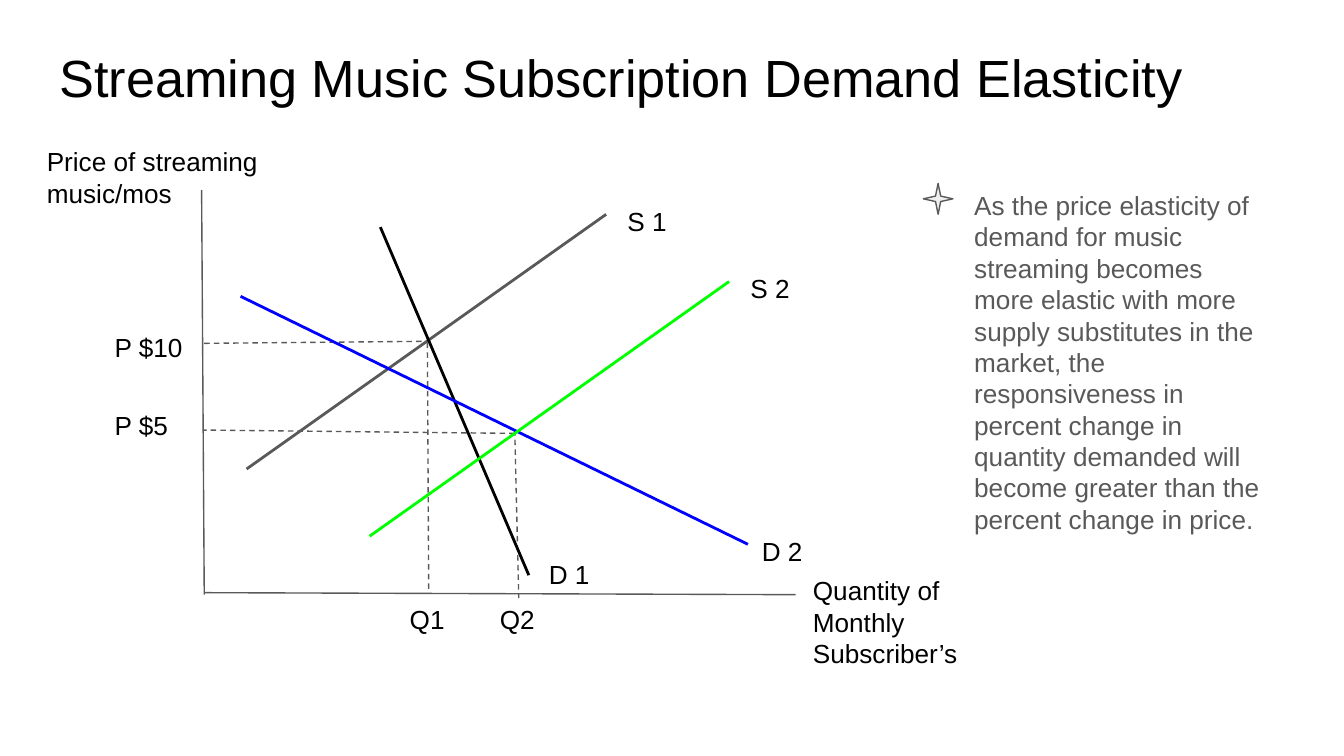
import pptx
import pptx.dml.color
import pptx.enum.dml
import pptx.enum.shapes
import pptx.enum.text
import pptx.oxml.ns
import pptx.util
from lxml import etree

EMU_PER_PX = 4572
BLACK, GRAY, BLUE, GREEN, PALE = "000000", "595959", "0000FF", "00FF00", "EEEEEE"


def px(length):
    """Turn px, 200 to the inch, into EMU."""
    return pptx.util.Emu(length * EMU_PER_PX)


def color(value):
    """Return the colour for a hex string."""
    return pptx.dml.color.RGBColor.from_string(value)


def add_text(slide, text, left, top, width, height, size=14, font_color=BLACK):
    """Add a wrapping, top-anchored text box."""
    box = slide.shapes.add_textbox(px(left), px(top), px(width), px(height))
    frame = box.text_frame
    frame.word_wrap = True
    frame.vertical_anchor = pptx.enum.text.MSO_ANCHOR.TOP
    frame.margin_left = frame.margin_top = px(20)
    frame.margin_right = frame.margin_bottom = px(20)
    frame.text = text
    font = frame.paragraphs[0].runs[0].font
    font.name = "Arial"
    font.size = pptx.util.Pt(size)
    font.color.rgb = color(font_color)


def add_line(slide, start, end, line_color=GRAY, width=0.75, dashed=False):
    """Add a straight line without a shadow."""
    line = slide.shapes.add_connector(
        pptx.enum.shapes.MSO_CONNECTOR.STRAIGHT, *map(px, start + end))
    line.line.color.rgb = color(line_color)
    line.line.width = pptx.util.Pt(width)
    if dashed:
        line.line.dash_style = pptx.enum.dml.MSO_LINE.DASH
    etree.SubElement(line._element.spPr, pptx.oxml.ns.qn("a:effectLst"))


def add_star(slide, left, top, width, height):
    """Add the thin four-point star that marks the note."""
    star = slide.shapes.add_shape(
        pptx.enum.shapes.MSO_SHAPE.STAR_4_POINT,
        px(left), px(top), px(width), px(height))
    star.adjustments[0] = 0.125
    star.shadow.inherit = False
    star.fill.solid()
    star.fill.fore_color.rgb = color(PALE)
    star.line.color.rgb = color(GRAY)
    star.line.width = pptx.util.Pt(0.75)


def main():
    """Build the demand elasticity slide."""
    presentation = pptx.Presentation()
    presentation.slide_width = px(2000)
    presentation.slide_height = px(1125)
    slide = presentation.slides.add_slide(presentation.slide_layouts[6])

    add_text(slide, "Streaming Music Subscription Demand Elasticity",
             69, 48, 1864, 126, size=28)

    axes = [((300, 283), (304, 885)), ((304, 882), (1184, 885))]
    for start, end in axes:
        add_line(slide, start, end)

    guides = [
        ((304, 511), (630, 508)),
        ((636, 510), (638, 878)),
        ((766, 645), (304, 640)),
        ((766, 640), (772, 890)),
    ]
    for start, end in guides:
        add_line(slide, start, end, dashed=True)

    curves = [
        ((367, 698), (902, 319), GRAY),
        ((566, 338), (787, 856), BLACK),
        ((358, 441), (1113, 810), BLUE),
        ((550, 798), (1085, 419), GREEN),
    ]
    for start, end, line_color in curves:
        add_line(slide, start, end, line_color, width=1.5)

    labels = [
        ("Price of streaming music/mos", 50, 197, 392, 60),
        ("Quantity of Monthly Subscriber’s", 1190, 835, 366, 60),
        ("S 1", 914, 286, 110, 50),
        ("S 2", 1097, 386, 110, 50),
        ("D 1", 797, 811, 124, 50),
        ("D 2", 1114, 777, 124, 50),
        ("P $10", 151, 473, 154, 60),
        ("P $5", 151, 590, 154, 60),
        ("Q1", 590, 878, 124, 82),
        ("Q2", 724, 878, 124, 82),
    ]
    for label in labels:
        add_text(slide, *label)

    add_text(slide, "As the price elasticity of demand for music streaming becomes "
             "more elastic with more supply substitutes in the market, the "
             "responsiveness in percent change in quantity demanded will become "
             "greater than the percent change in price.",
             1430, 262, 476, 634, font_color=GRAY)
    add_star(slide, 1374, 273, 44, 46)

    presentation.save("out.pptx")


if __name__ == "__main__":
    main()
